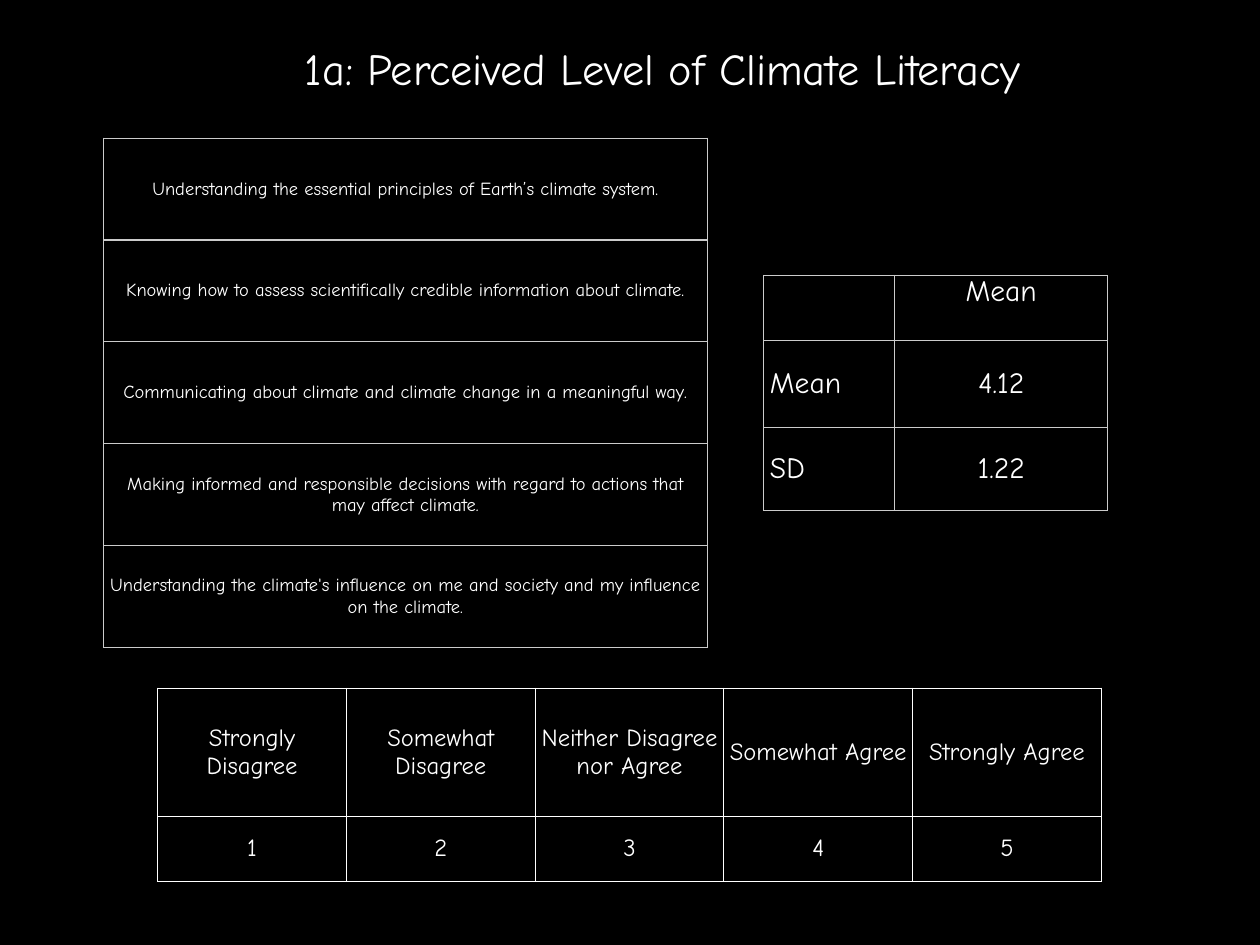
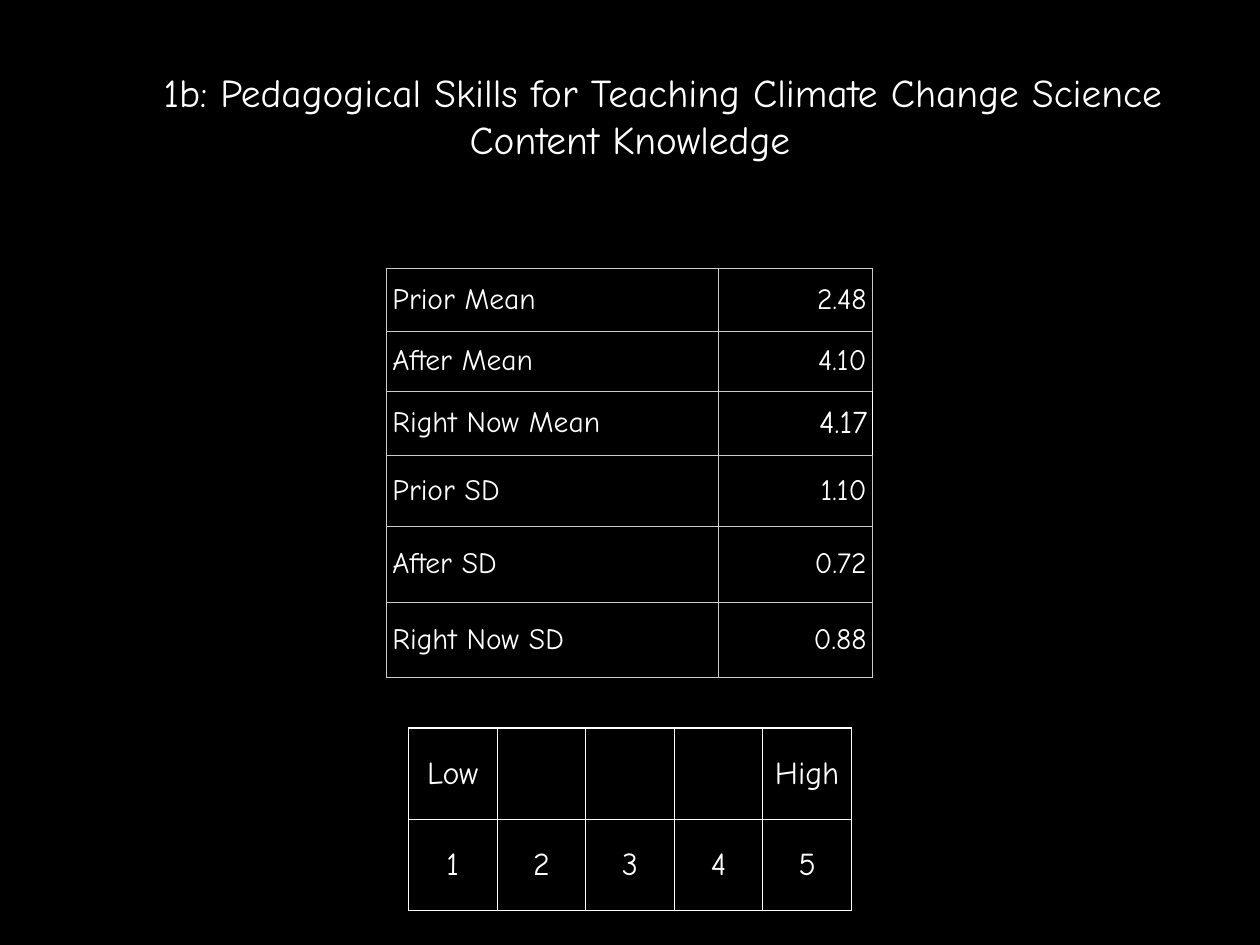
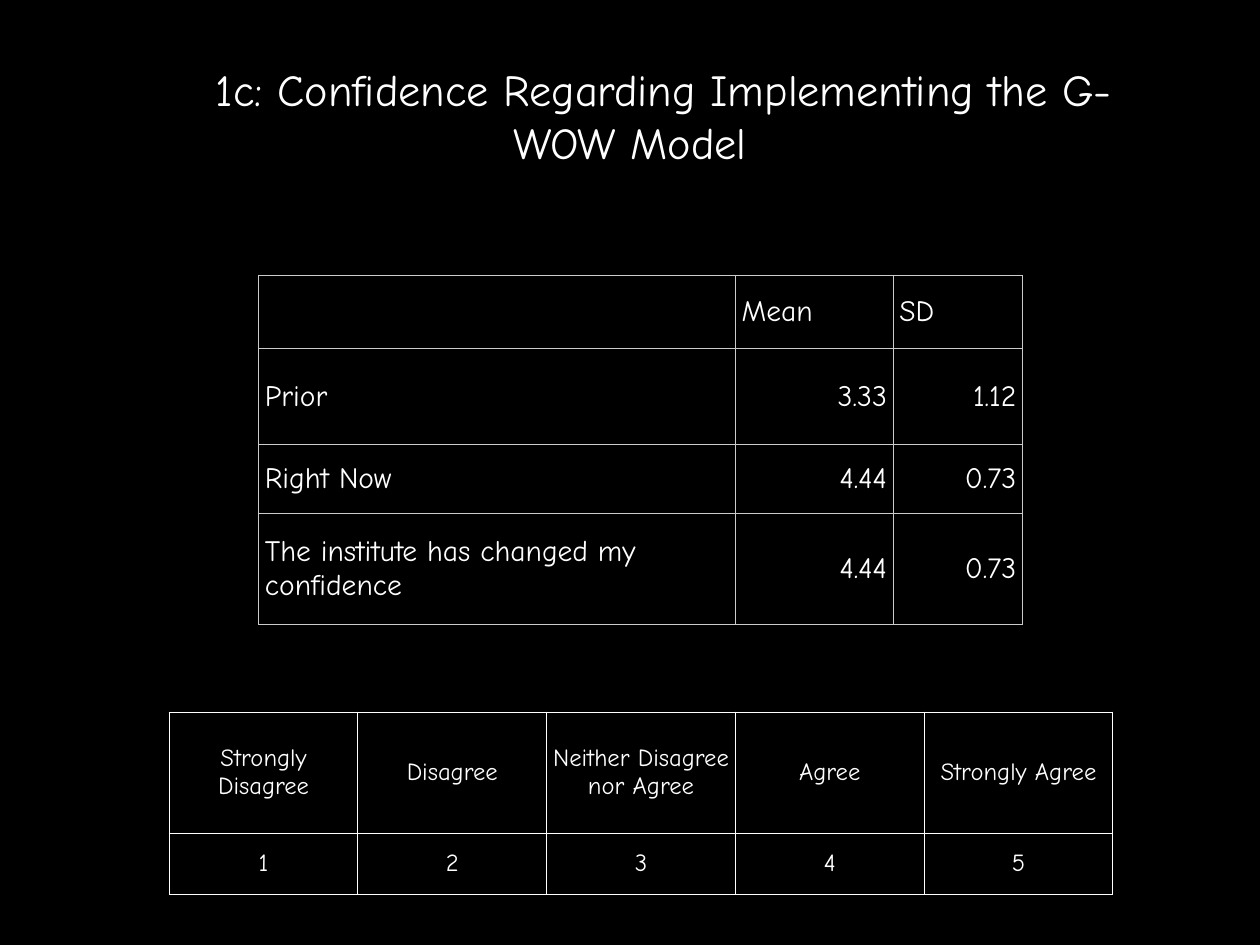
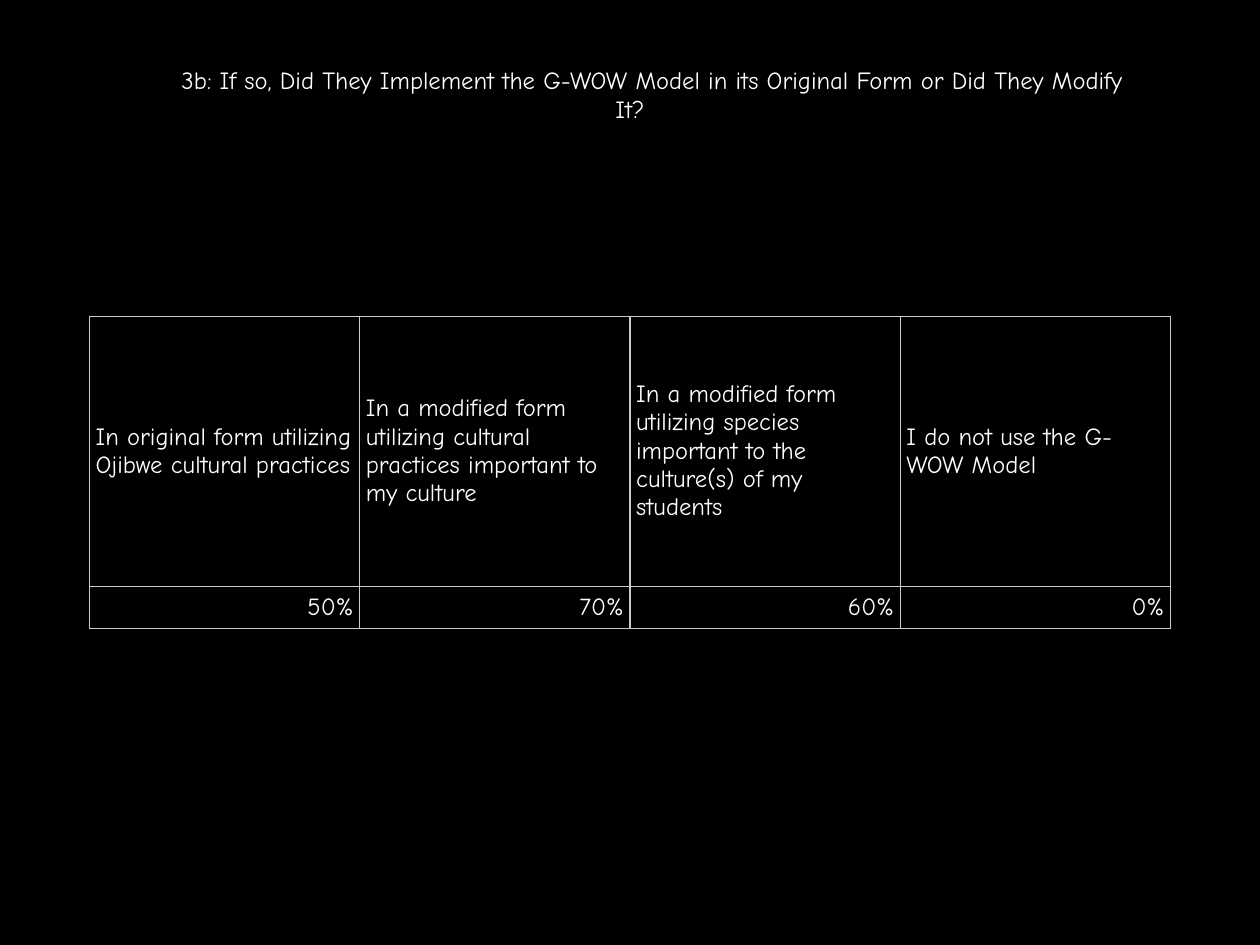
from lxml import etree
from pptx import Presentation
from pptx.dml.color import RGBColor
from pptx.enum.text import MSO_ANCHOR, PP_ALIGN
from pptx.oxml.ns import qn
from pptx.util import Inches, Pt

TOP, MID = MSO_ANCHOR.TOP, MSO_ANCHOR.MIDDLE
ALIGN = {"l": PP_ALIGN.LEFT, "c": PP_ALIGN.CENTER, "r": PP_ALIGN.RIGHT}
HEX = {"back": "000000", "text": "FFFFFF", "rule": "CBCBCB"}
FONT = "Comic Neue"
SIDES = ("L", "R", "T", "B")

# Line styles: colour, opacity in percent
GREY, SOFT = (HEX["rule"], 100), (HEX["text"], 50)

# Insets in inches: left, top, right, bottom
EVEN, SLIM = (0.06,) * 4, (0.07, 0, 0.07, 0)

# Table styles
DATA = {"line": GREY, "inset": SLIM, "size": 24}
SCALE = {"line": SOFT, "inset": EVEN, "size": 20, "align": ["ccccc"] * 2}
MARKS = ["1", "2", "3", "4", "5"]

# Content: "align" has one letter per cell, "odd" the cells that differ
SLIDES = [
    {"title": "1a: Perceived Level of Climate Literacy",
     "at": (0.35, -0.62, 13.51, 2.78), "size": 36, "indent": 0.75,
     "tables": [
         {**DATA, "at": (8.62, 3.11), "cols": [1.48, 2.4],
          "heights": [0.74, 0.98, 0.93], "align": ["lc"] * 3,
          "odd": {(0, 1): {"anchor": TOP}},
          "rows": [["", "Mean"], ["Mean", "4.12"], ["SD", "1.22"]]},
         {**SCALE, "at": (1.78, 7.77), "cols": [2.13] * 5,
          "heights": [1.45, 0.73],
          "rows": [["Strongly Disagree", "Somewhat Disagree",
                    "Neither Disagree nor Agree", "Somewhat Agree",
                    "Strongly Agree"], MARKS]},
         {**DATA, "at": (1.17, 1.56), "cols": [6.81], "size": 15,
          "heights": [1.15] * 5, "align": ["c"] * 5,
          "rows": [
              ["Understanding the essential principles of Earth’s climate "
               "system."],
              ["Knowing how to assess scientifically credible information "
               "about climate."],
              ["Communicating about climate and climate change in a "
               "meaningful way."],
              ["Making informed and responsible decisions with regard to "
               "actions that may affect climate."],
              ["Understanding the climate's influence on me and society and "
               "my influence on the climate."]]},
     ]},
    {"title": "1b: Pedagogical Skills for Teaching Climate Change Science "
              "Content Knowledge",
     "at": (0.97, -0.09, 12.28, 2.78), "size": 32, "indent": 0.75,
     "tables": [
         {**SCALE, "at": (4.61, 8.22), "cols": [1] * 5, "size": 26,
          "heights": [1.03] * 2,
          "rows": [["Low", "", "", "", "High"], MARKS]},
         {**DATA, "at": (4.36, 3.03), "cols": [3.75, 1.74],
          "heights": [0.71, 0.68, 0.72, 0.8, 0.86, 0.85],
          "align": ["lr"] * 6,
          "odd": {(2, 1): {"size": 26, "inset": EVEN, "R": SOFT}},
          "rows": [["Prior Mean", "2.48"], ["After Mean", "4.10"],
                   ["Right Now Mean", "4.17"], ["Prior SD", "1.10"],
                   ["After SD", "0.72"], ["Right Now SD", "0.88"]]},
     ]},
    {"title": "1c: Confidence Regarding Implementing the G-WOW Model",
     "at": (1.39, -0.09, 11.44, 2.78), "size": 36, "indent": 0.75,
     "tables": [
         {**DATA, "at": (2.92, 3.11), "cols": [5.38, 1.78, 1.46],
          "heights": [0.83, 1.08, 0.78, 1.25],
          "align": ["lll"] + ["lrr"] * 3,
          "rows": [["", "Mean", "SD"], ["Prior", "3.33", "1.12"],
                   ["Right Now", "4.44", "0.73"],
                   ["The institute has changed my confidence",
                    "4.44", "0.73"]]},
         {**SCALE, "at": (1.91, 8.04), "cols": [2.13] * 5,
          "heights": [1.37, 0.69],
          "rows": [["Strongly Disagree", "Disagree",
                    "Neither Disagree nor Agree", "Agree",
                    "Strongly Agree"], MARKS]},
     ]},
    {"title": "3b: If so, Did They Implement the G-WOW Model in its Original "
              "Form or Did They Modify It?",
     "at": (1.39, 0.44, 11.44, 1.25), "size": 20, "indent": 0.5,
     "tables": [
         {**DATA, "at": (1.01, 3.57), "cols": [3.05] * 4, "size": 20,
          "heights": [3.05, 0.48], "align": ["llll", "rrrr"],
          "rows": [["In original form utilizing Ojibwe cultural practices",
                    "In a modified form utilizing cultural practices "
                    "important to my culture",
                    "In a modified form utilizing species important to the "
                    "culture(s) of my students",
                    "I do not use the G-WOW Model"],
                   ["50%", "70%", "60%", "0%"]]},
     ]},
]


def apply(obj, form):
    for key, value in form.items():
        setattr(obj, key, value)


def margins(inset):
    names = ("margin_left", "margin_top", "margin_right", "margin_bottom")
    return dict(zip(names, map(Inches, inset)))


def write(para, text, size, align):
    para.text = text
    para.alignment = ALIGN[align]
    apply(para.font, {"name": FONT, "size": Pt(size)})
    para.font.color.rgb = RGBColor.from_string(HEX["text"])


def fade(color, percent):
    etree.SubElement(color, qn("a:alpha"), val=str(percent * 1000))


def add_edge(props, side, line):
    edge = etree.SubElement(props, qn("a:ln" + side), w=str(Pt(1)))
    fill = etree.SubElement(edge, qn("a:solidFill"))
    color = etree.SubElement(fill, qn("a:srgbClr"), val=line[0])
    if line[1] < 100:
        fade(color, line[1])


def add_title(slide, page):
    frame = slide.shapes.add_textbox(*map(Inches, page["at"])).text_frame
    apply(frame, {"word_wrap": True, "vertical_anchor": MID, **margins(EVEN)})
    para = frame.paragraphs[0]
    write(para, page["title"], page["size"], "c")
    para._p.get_or_add_pPr().set("indent", str(Inches(page["indent"])))


def fill_cell(cell, text, align, form, band):
    apply(cell, {"vertical_anchor": form.get("anchor", MID),
                 **margins(form["inset"])})
    write(cell.text_frame.paragraphs[0], text, form["size"], align)
    props = cell._tc.get_or_add_tcPr()
    for side in SIDES:
        add_edge(props, side, form.get(side, form["line"]))
    if band:
        cell.fill.solid()
        cell.fill.fore_color.rgb = RGBColor.from_string(HEX["back"])
        fade(props.find(qn("a:solidFill")).find(qn("a:srgbClr")), 25)
    else:
        cell.fill.background()


def add_grid(slide, data):
    cols, heights = data["cols"], data["heights"]
    box = (*data["at"], sum(cols), sum(heights))
    table = slide.shapes.add_table(
        len(heights), len(cols), *map(Inches, box)).table
    apply(table, {"first_row": False, "horz_banding": False})
    for col, width in zip(table.columns, cols):
        col.width = Inches(width)
    for r, (row, height) in enumerate(zip(table.rows, heights)):
        row.height = Inches(height)
        for c, text in enumerate(data["rows"][r]):
            form = {**data, **data.get("odd", {}).get((r, c), {})}
            fill_cell(table.cell(r, c), text, data["align"][r][c], form,
                      r % 2 == 1)


def main():
    deck = Presentation()
    apply(deck, {"slide_width": Inches(14.22), "slide_height": Inches(10.67)})
    blank = deck.slide_layouts[6]
    # Shared black background
    back = deck.slide_master.background.fill
    back.solid()
    back.fore_color.rgb = RGBColor.from_string(HEX["back"])
    for page in SLIDES:
        slide = deck.slides.add_slide(blank)
        add_title(slide, page)
        for data in page["tables"]:
            add_grid(slide, data)
    deck.save("out.pptx")


if __name__ == "__main__":
    main()
